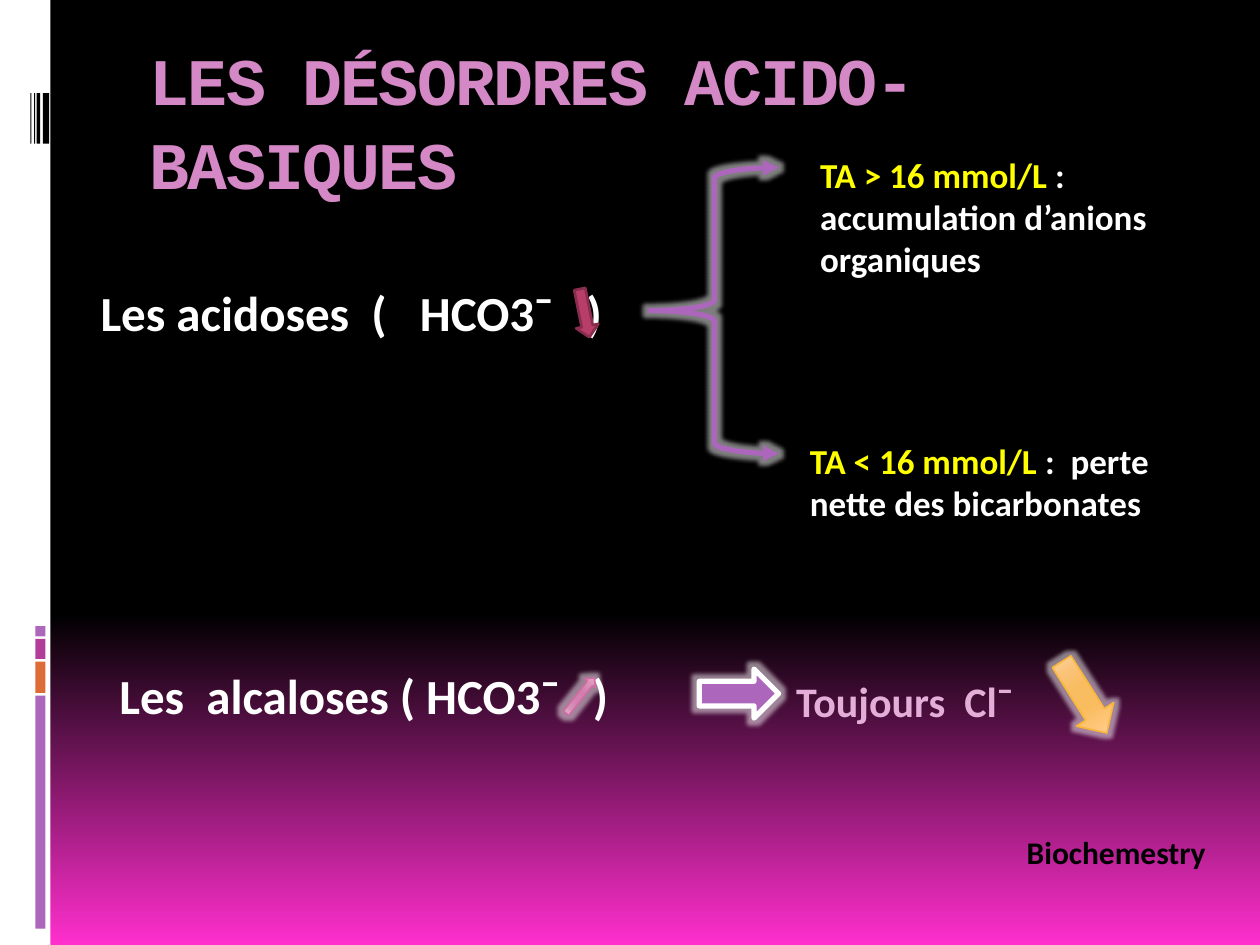
import pptx
import pptx.util
import pptx.dml.color
import pptx.enum.shapes
import pptx.oxml.ns
from lxml import etree

W, H = 10, 7.5
SHAPE = pptx.enum.shapes.MSO_SHAPE
COLORS = {
    "white": "FFFFFF", "black": "000000", "pink": "FF2FCD", "title": "D488C5",
    "yellow": "FFFF00", "lilac": "E3AFD8", "purple": "AC66BB", "orange": "DE6C36",
    "magenta": "B13F9A", "crimson": "B83D68", "wine": "882D4D",
    "rose": "CF6DA4", "amber": "F9B639",
}
BACKGROUND = [(0, "000000"), (65, "000000"), (100, "FF2FCD")]
ROSE = [(0, "EFC5D9"), (25, "D790B6"), (40, "D381AE"), (50, "D37FAC"),
        (60, "D381AE"), (75, "DB92B8"), (100, "F1C3D9")]
AMBER = [(0, "FFE0BF"), (25, "FAC378"), (40, "F9BD61"), (50, "F9BC5E"),
         (60, "F9BD61"), (75, "FFC679"), (100, "FFE0BF")]

BAR_LEFT, BAR_WIDTH, BAR_GAP, BAR_BOTTOM = 0.28, 0.08, 0.02, 7.37
BARS = [(1.85, "purple"), (0.25, "orange"), (0.16, "magenta"), (0.08, "purple")]
STRIPE_TOP, STRIPE_HEIGHT = 0.74, 0.4
STRIPES = [(0.34, 0.05), (0.29, 0.03), (0.27, 0.01), (0.24, 0.01)]

SPACE_SHARE = 0.226
TEXTS = [
    {"at": (0.7, 2.19, 4.3, 0.57), "size": 28, "runs": [
        ("Les acidoses", "white"), 2, ("(", "white"), 3, ("HCO3¯", "white"), 3, (")", "white")]},
    {"at": (0.85, 5.23, 4.54, 0.57), "size": 28, "runs": [
        ("Les", "white"), 2, ("alcaloses ( HCO3¯", "white"), 3, (")", "white")]},
    {"at": (6.41, 1.17, 3.28, 1.11), "size": 20, "runs": [
        ("TA > 16 mmol/L ", "yellow"), (": accumulation d’anions organiques", "white")]},
    {"at": (6.33, 3.44, 3.28, 0.77), "size": 20, "runs": [
        ("TA < 16 mmol/L ", "yellow"), (":", "white"), 2,
        ("perte nette des bicarbonates", "white")]},
    {"at": (6.22, 5.31, 3.78, 0.5), "size": 24, "runs": [
        ("Toujours", "lilac"), 2, ("Cl¯", "lilac")]},
    {"at": (8.05, 6.56, 1.95, 0.71), "size": 18, "runs": [("Biochemestry", "black")]},
]
TITLE = {"at": (1.09, 0.22, 8.5, 1.35), "size": 38, "font": "Courier New",
         "spc": -1, "leading": 1.06, "runs": [("LES DÉSORDRES ACIDO-BASIQUES", "title")]}
ARROWS = [
    {"kind": SHAPE.DOWN_ARROW, "at": (4.55, 5.34, 0.11, 0.36), "rot": 218.5,
     "fill": ROSE, "line": ("rose", 0.94), "glow": True},
    {"kind": SHAPE.LEFT_BRACE, "at": (5.16, 1.33, 1.02, 2.27), "rot": 0,
     "fill": None, "line": ("purple", 3), "glow": True, "heads": True},
    {"kind": SHAPE.DOWN_ARROW, "at": (4.55, 2.29, 0.18, 0.39), "rot": 348.7,
     "fill": "crimson", "line": ("wine", 1.5), "glow": False},
    {"kind": SHAPE.RIGHT_ARROW, "at": (5.55, 5.31, 0.63, 0.39), "rot": 0,
     "fill": "purple", "line": ("white", 3), "glow": True},
    {"kind": SHAPE.DOWN_ARROW, "at": (8.43, 5.2, 0.35, 0.67), "rot": 327.7,
     "fill": AMBER, "line": ("amber", 0.94), "glow": True},
]


def rgb(name):
    return pptx.dml.color.RGBColor.from_string(COLORS[name])


def inches(at):
    return [pptx.util.Inches(v) for v in at]


def child(parent, tag, **attrs):
    el = etree.SubElement(parent, pptx.oxml.ns.qn(tag))
    for key, value in attrs.items():
        el.set(key, str(value))
    return el


def set_gradient(fill, root, stops):
    fill.gradient()
    fill.gradient_angle = 270
    gs_list = root.xpath(".//a:gsLst")[0]
    for gs in list(gs_list):
        gs_list.remove(gs)
    for pos, color in stops:
        child(child(gs_list, "a:gs", pos=pos * 1000), "a:srgbClr", val=color)


def add_shape(s, kind, at, fill):
    sp = s.shapes.add_shape(kind, *inches(at))
    sp.shadow.inherit = False
    sp.line.fill.background()
    if fill is None:
        sp.fill.background()
    elif isinstance(fill, list):
        set_gradient(sp.fill, sp._element, fill)
    else:
        sp.fill.solid()
        sp.fill.fore_color.rgb = rgb(fill)
    return sp


def add_arrow(s, item):
    sp = add_shape(s, item["kind"], item["at"], item["fill"])
    sp.rotation = item["rot"]
    color, width = item["line"]
    sp.line.color.rgb = rgb(color)
    sp.line.width = pptx.util.Pt(width)
    if item.get("heads"):
        sp.adjustments[0] = 0.083
        ln = sp._element.xpath(".//a:ln")[0]
        for end in ("a:headEnd", "a:tailEnd"):
            child(ln, end, type="triangle")
    if item["glow"]:
        effects = sp._element.xpath(".//a:effectLst")[0]
        glow = child(effects, "a:glow", rad=pptx.util.Pt(5))
        child(child(glow, "a:srgbClr", val=COLORS["white"]), "a:alpha", val=50000)


def add_text(s, item):
    tf = s.shapes.add_textbox(*inches(item["at"])).text_frame
    tf.word_wrap = True
    p = tf.paragraphs[0]
    p.line_spacing = item.get("leading", 1.0)
    size = item["size"]
    color = item["runs"][0][1]
    for run in item["runs"]:
        spacing = item.get("spc", 0)
        if isinstance(run, int):
            text, spacing = " ", (run - 1) * SPACE_SHARE * size
        else:
            text, color = run
        r = p.add_run()
        r.text = text
        r.font.name = item.get("font", "Calibri")
        r.font.size = pptx.util.Pt(size)
        r.font.bold = True
        r.font.color.rgb = rgb(color)
        if spacing:
            r.font._element.set("spc", str(round(spacing * 100)))


def main():
    prs = pptx.Presentation()
    prs.slide_width, prs.slide_height = inches((W, H))
    s = prs.slides.add_slide(prs.slide_layouts[6])
    set_gradient(s.background.fill, s._element, BACKGROUND)

    add_shape(s, SHAPE.RECTANGLE, (0, 0, 0.04 * W, H), "white")
    bottom = BAR_BOTTOM
    for height, color in BARS:
        add_shape(s, SHAPE.RECTANGLE, (BAR_LEFT, bottom - height, BAR_WIDTH, height), color)
        bottom -= height + BAR_GAP
    for left, width in STRIPES:
        add_shape(s, SHAPE.RECTANGLE, (left, STRIPE_TOP, width, STRIPE_HEIGHT), "black")

    for item in [TITLE] + TEXTS:
        add_text(s, item)
    for item in ARROWS:
        add_arrow(s, item)
    prs.save("out.pptx")


if __name__ == "__main__":
    main()
